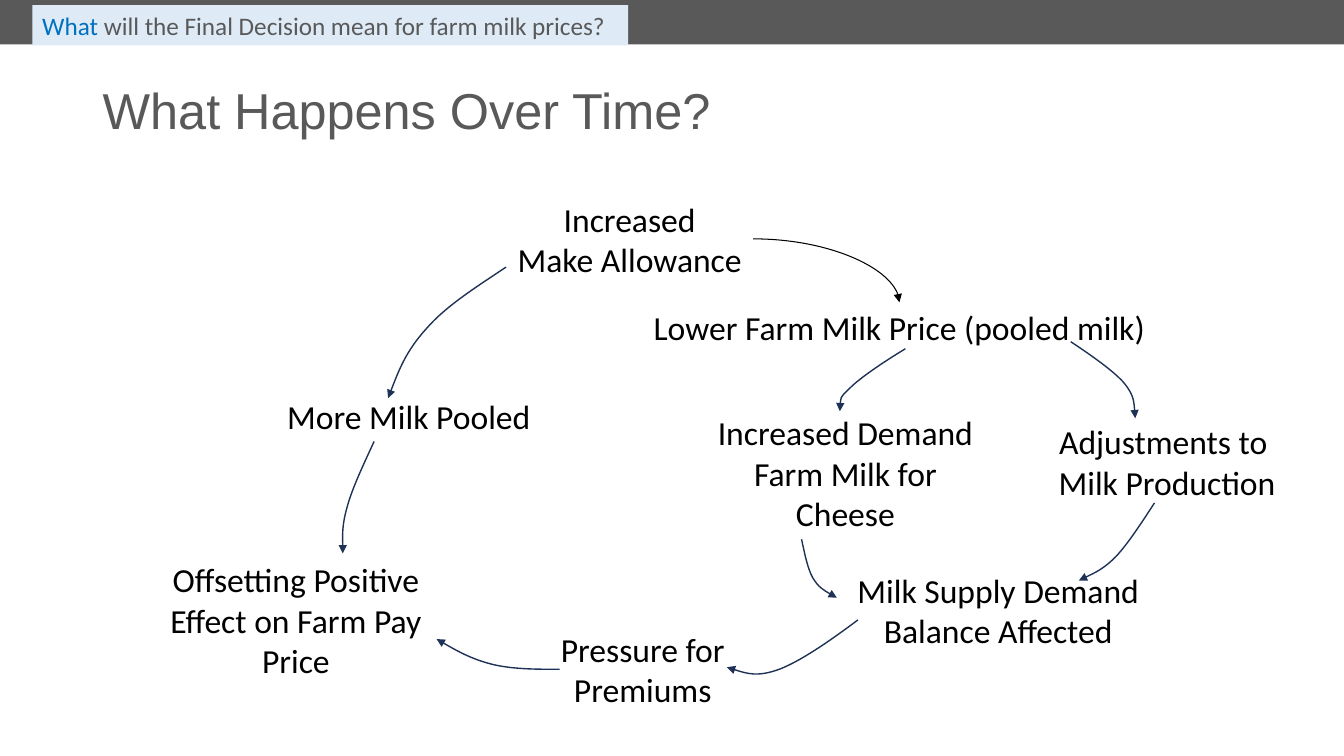
from lxml import etree
from pptx import Presentation
from pptx import util as u
from pptx.dml.color import RGBColor
from pptx.enum import shapes, text
from pptx.oxml.ns import qn

GREY, BLUE, PALE_BLUE, NAVY, BLACK = "595959", "0070C0", "DEEBF7", "1E3256", "000000"


def color(hex_value):
    return RGBColor.from_string(hex_value)


class FlowSlide:
    """Holds the text style and the slide being drawn."""

    body_font, title_font = "Calibri", "Arial"

    def __init__(self, slide):
        self.shapes = slide.shapes

    def bar(self, left, top, width, height, fill):
        bar = self.shapes.add_shape(
            shapes.MSO_SHAPE.RECTANGLE, *map(u.Inches, (left, top, width, height)))
        bar.shadow.inherit = False
        bar.fill.solid()
        bar.fill.fore_color.rgb = color(fill)
        bar.line.fill.background()
        return bar

    def style(self, paragraph, size, font, hex_value=None, align=text.PP_ALIGN.LEFT):
        paragraph.alignment = align
        paragraph.font.size = u.Pt(size)
        paragraph.font.name = font
        if hex_value:
            paragraph.font.color.rgb = color(hex_value)

    def tab(self, left, top, width, height, runs):
        frame = self.bar(left, top, width, height, PALE_BLUE).text_frame
        frame.word_wrap = False
        frame.vertical_anchor = text.MSO_ANCHOR.TOP
        paragraph = frame.paragraphs[0]
        self.style(paragraph, 18, self.body_font)
        for words, hex_value in runs:
            run = paragraph.add_run()
            run.text = words
            run.font.color.rgb = color(hex_value)

    def title(self, left, top, width, height, words):
        frame = self.shapes.add_textbox(*map(u.Inches, (left, top, width, height))).text_frame
        frame.word_wrap = True
        frame.vertical_anchor = text.MSO_ANCHOR.MIDDLE
        frame.text = words
        frame.paragraphs[0].line_spacing = 0.9
        self.style(frame.paragraphs[0], 36, self.title_font, GREY)

    def step(self, left, top, width, height, words, wrap=True):
        frame = self.shapes.add_textbox(*map(u.Inches, (left, top, width, height))).text_frame
        frame.word_wrap = wrap
        frame.auto_size = text.MSO_AUTO_SIZE.SHAPE_TO_FIT_TEXT
        frame.text = words
        for paragraph in frame.paragraphs:
            self.style(paragraph, 24, self.body_font, BLACK, text.PP_ALIGN.CENTER)

    def arrowhead(self, line_shape, hex_value, width):
        line_shape.line.color.rgb = color(hex_value)
        line_shape.line.width = u.Pt(width)
        etree.SubElement(line_shape.line._get_or_add_ln(), qn("a:tailEnd"), type="triangle")

    def quarter_arrow(self, start, end):
        arrow = self.shapes.add_connector(
            shapes.MSO_CONNECTOR.CURVE, *map(u.Inches, start + end))
        properties = arrow._element.spPr
        properties.find(qn("a:prstGeom")).set("prst", "curvedConnector2")
        self.arrowhead(arrow, BLACK, 0.75)
        etree.SubElement(properties, qn("a:effectLst"))

    def curved_arrow(self, points):
        """Start point, then three points (two controls, one end) per Bézier curve."""
        start, *rest = [(u.Inches(x), u.Inches(y)) for x, y in points]
        builder = self.shapes.build_freeform(*start)
        builder.add_line_segments(rest, close=False)
        arrow = builder.convert_to_shape()
        arrow.shadow.inherit = False
        arrow.fill.background()
        self.arrowhead(arrow, NAVY, 1)
        # Turn every three straight segments into one cubic curve
        segments = list(arrow._element.iter(qn("a:lnTo")))
        for i in range(0, len(segments), 3):
            curve = etree.Element(qn("a:cubicBezTo"))
            segments[i].addprevious(curve)
            for segment in segments[i:i + 3]:
                curve.append(segment[0])
                segment.getparent().remove(segment)


def main():
    deck = Presentation()
    deck.slide_width, deck.slide_height = u.Inches(13.33), u.Inches(7.5)
    flow = FlowSlide(deck.slides.add_slide(deck.slide_layouts[6]))

    # Header band and title
    flow.bar(0, 0, 13.33, 0.44, GREY)
    flow.title(0.92, 0.4, 11.5, 1.45, "What Happens Over Time?")

    # Steps of the cycle
    flow.step(5.02, 1.92, 2.45, 0.91, "Increased\nMake Allowance", wrap=False)
    flow.step(6.36, 3, 5.12, 0.51, "Lower Farm Milk Price (pooled milk)", wrap=False)
    flow.step(10.39, 4.13, 2.37, 0.91, "Adjustments to \vMilk Production", wrap=False)
    flow.step(6.95, 4.04, 2.87, 1.31, "Increased Demand Farm Milk for Cheese")
    flow.step(2.62, 3.88, 2.87, 0.5, "More Milk Pooled")
    flow.step(8.14, 5.6, 3.52, 0.91, "Milk Supply Demand Balance Affected")
    flow.step(4.94, 6.19, 2.87, 0.91, "Pressure for Premiums")
    flow.step(1.5, 5.5, 2.87, 1.31, "Offsetting Positive Effect on Farm Pay Price")

    # Arrows between the steps
    flow.quarter_arrow((7.47, 2.37), (8.92, 3))
    price_to_production = [(10.62, 3.39), (10.83, 3.53), (11.03, 3.67), (11.14, 3.79),
                           (11.25, 3.92), (11.25, 4.03), (11.26, 4.15)]
    price_to_demand = [(8.98, 3.46), (8.75, 3.6), (8.53, 3.75), (8.43, 3.85),
                       (8.32, 3.95), (8.33, 4.02), (8.33, 4.08)]
    allowance_to_pooled = [(5.02, 2.65), (4.72, 2.85), (4.42, 3.04), (4.23, 3.26),
                           (4.03, 3.48), (3.94, 3.71), (3.85, 3.95)]
    production_to_balance = [(11.45, 4.99), (11.32, 5.19), (11.19, 5.39), (11.07, 5.52),
                             (10.94, 5.65), (10.82, 5.7), (10.7, 5.76)]
    demand_to_balance = [(7.95, 5.35), (7.98, 5.49), (8.01, 5.64), (8.06, 5.73),
                         (8.12, 5.83), (8.21, 5.88), (8.3, 5.93)]
    pooled_to_offset = [(3.71, 4.38), (3.6, 4.62), (3.49, 4.85), (3.44, 5.04),
                        (3.39, 5.22), (3.4, 5.36), (3.4, 5.49)]
    balance_to_premiums = [(8.51, 6.15), (8.23, 6.36), (7.94, 6.56), (7.73, 6.64),
                           (7.51, 6.72), (7.36, 6.67), (7.21, 6.62)]
    premiums_to_offset = [(5.55, 6.64), (5.32, 6.64), (5.08, 6.64), (4.88, 6.59),
                          (4.68, 6.54), (4.5, 6.44), (4.33, 6.34)]
    for points in (price_to_production, price_to_demand, allowance_to_pooled,
                   production_to_balance, demand_to_balance, pooled_to_offset,
                   balance_to_premiums, premiums_to_offset):
        flow.curved_arrow(points)

    # Section tab over the header band
    flow.tab(0.32, 0.05, 5.91, 0.4, [
        ("What ", BLUE), ("will the Final Decision mean for farm milk prices?", GREY)])

    deck.save("out.pptx")


if __name__ == "__main__":
    main()
